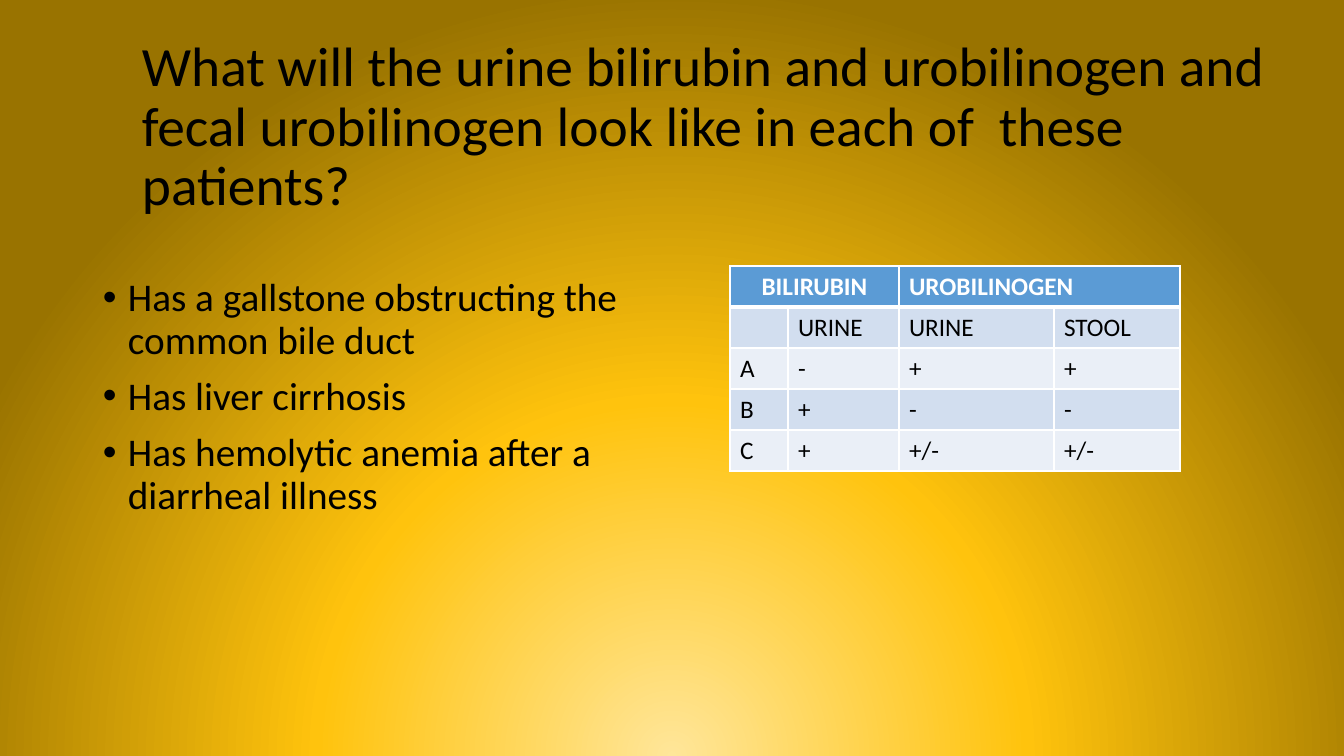
from lxml.etree import SubElement
from pptx import Presentation
from pptx.dml.color import RGBColor
from pptx.enum.text import MSO_ANCHOR, PP_ALIGN
from pptx.oxml import parse_xml
from pptx.oxml.ns import nsdecls, qn
from pptx.util import Pt

# Content
QUESTION = ("What will the urine bilirubin and urobilinogen and fecal "
            "urobilinogen look like in each of  these patients?")
PATIENTS = [
    "Has a gallstone obstructing the common bile duct",
    "Has liver cirrhosis",
    "Has hemolytic anemia after a diarrheal illness",
]
FINDINGS = [
    ["BILIRUBIN", "", "UROBILINOGEN", ""],
    ["", "URINE", "URINE", "STOOL"],
    ["A", "-", "+", "+"],
    ["B", "+", "-", "-"],
    ["C", "+", "+/-", "+/-"],
]

# Layout in px and style
SLIDE = (1344, 756)
QUESTION_BOX = (132, 55, 1159, 146)
PATIENTS_BOX = (93, 273, 572, 407)
FINDINGS_AT = (730, 266)
COLUMNS = [58, 111, 155, 126]
ROW = 41
BULLET_INDENT = 25
FONT = "Calibri"
BLACK, WHITE = "000000", "FFFFFF"
HEADER, BANDS = "5B9BD5", ["EAEFF7", "D2DEEF"]
GLOW = [(0, "FFE699"), (46, "FFC30D"), (100, "997300")]


def px(length):
    return round(length * 914400 / 100.8)


def color(hex_code):
    return RGBColor.from_string(hex_code)


def write(paragraph, text, size=18, fill=BLACK, bold=False,
          align=PP_ALIGN.LEFT, spacing=None, before=None):
    run = paragraph.add_run()
    run.text = text
    run.font.name = FONT
    run.font.size = Pt(size)
    run.font.bold = bold
    run.font.color.rgb = color(fill)
    paragraph.alignment = align
    if spacing:
        paragraph.line_spacing = spacing
    if before:
        paragraph.space_before = Pt(before)


def text_frame(box, anchor):
    frame = slide.shapes.add_textbox(*map(px, box)).text_frame
    frame.word_wrap = True
    frame.vertical_anchor = anchor
    return frame


def add_bullet(paragraph):
    properties = paragraph._p.get_or_add_pPr()
    properties.set("marL", str(px(BULLET_INDENT)))
    properties.set("indent", str(-px(BULLET_INDENT)))
    SubElement(properties, qn("a:buFont"), typeface="Arial")
    SubElement(properties, qn("a:buChar"), char="•")


def add_borders(cell, **widths):
    properties = cell._tc.get_or_add_tcPr()
    for position, side in enumerate("LRTB"):
        width = Pt(widths.get(side, 1))
        properties.insert(position, parse_xml(
            f'<a:ln{side} {nsdecls("a")} w="{width}"><a:solidFill>'
            f'<a:srgbClr val="{WHITE}"/></a:solidFill></a:ln{side}>'))


presentation = Presentation()
presentation.slide_width, presentation.slide_height = map(px, SLIDE)
slide = presentation.slides.add_slide(presentation.slide_layouts[6])

# Background glow from the bottom centre
slide.background.fill.gradient()
plain_gradient = slide.element.find(".//" + qn("a:gradFill"))
stops = "".join(f'<a:gs pos="{at * 1000}"><a:srgbClr val="{code}"/></a:gs>'
                for at, code in GLOW)
plain_gradient.getparent().replace(plain_gradient, parse_xml(
    f'<a:gradFill {nsdecls("a")} rotWithShape="1"><a:gsLst>{stops}</a:gsLst>'
    '<a:path path="circle"><a:fillToRect l="50000" t="130000" r="50000" '
    'b="-30000"/></a:path></a:gradFill>'))

# Question
question = text_frame(QUESTION_BOX, MSO_ANCHOR.MIDDLE)
write(question.paragraphs[0], QUESTION, size=39.6, spacing=0.9)

# Patients
patients = text_frame(PATIENTS_BOX, MSO_ANCHOR.TOP)
for index, patient in enumerate(PATIENTS):
    line = patients.add_paragraph() if index else patients.paragraphs[0]
    write(line, patient, size=28, spacing=0.9, before=10)
    add_bullet(line)

# Findings table
findings = slide.shapes.add_table(
    len(FINDINGS), len(COLUMNS), *map(px, FINDINGS_AT),
    px(sum(COLUMNS)), px(ROW * len(FINDINGS))).table
findings.first_row = findings.horz_banding = False
for column, width in zip(findings.columns, COLUMNS):
    column.width = px(width)
for r, values in enumerate(FINDINGS):
    findings.rows[r].height = px(ROW)
    for c, value in enumerate(values):
        cell = findings.cell(r, c)
        cell.fill.solid()
        cell.fill.fore_color.rgb = color(BANDS[r % 2] if r else HEADER)
        add_borders(cell, B=1 if r else 3, T=3 if r == 1 else 1)
        if value:
            write(cell.text_frame.paragraphs[0], value,
                  fill=BLACK if r else WHITE, bold=r == 0,
                  align=PP_ALIGN.CENTER if (r, c) == (0, 0) else PP_ALIGN.LEFT)
        else:
            cell.text_frame.paragraphs[0].font.size = Pt(18)
for c in (0, 2):
    findings.cell(0, c).merge(findings.cell(0, c + 1))

presentation.save("out.pptx")
